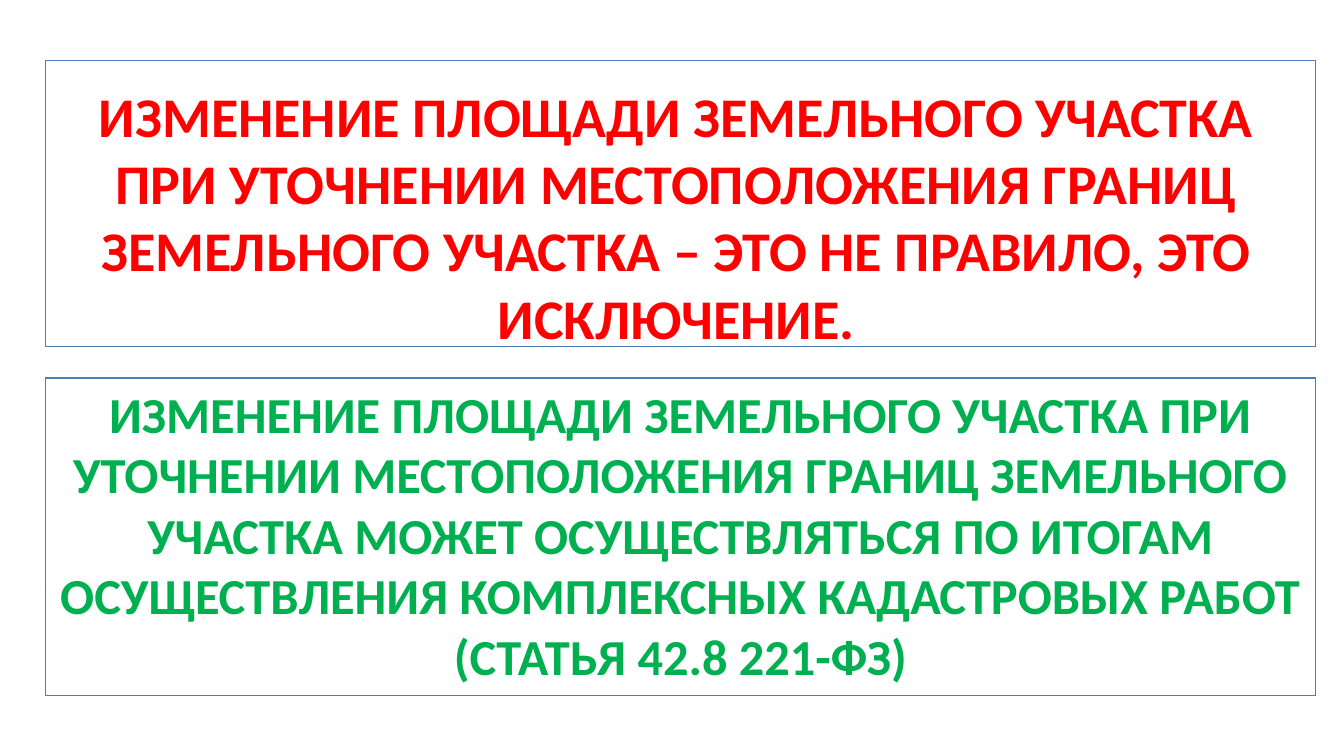
from pptx import Presentation
from pptx.dml.color import RGBColor
from pptx.enum.shapes import MSO_CONNECTOR
from pptx.enum.text import MSO_ANCHOR, PP_ALIGN
from pptx.oxml.ns import qn
from pptx.util import Pt
from lxml.etree import SubElement

PX = 9144  # EMU in one px, 100 px to the inch
COLORS = {"frame": "4B7EBC", "rule": "FF0000", "exception": "00B050"}
RULE = (
    "ИЗМЕНЕНИЕ ПЛОЩАДИ ЗЕМЕЛЬНОГО УЧАСТКА ПРИ УТОЧНЕНИИ МЕСТОПОЛОЖЕНИЯ ГРАНИЦ "
    "ЗЕМЕЛЬНОГО УЧАСТКА – ЭТО НЕ ПРАВИЛО, ЭТО ИСКЛЮЧЕНИЕ."
)
EXCEPTION = (
    "ИЗМЕНЕНИЕ ПЛОЩАДИ ЗЕМЕЛЬНОГО УЧАСТКА ПРИ УТОЧНЕНИИ МЕСТОПОЛОЖЕНИЯ ГРАНИЦ "
    "ЗЕМЕЛЬНОГО УЧАСТКА МОЖЕТ ОСУЩЕСТВЛЯТЬСЯ ПО ИТОГАМ ОСУЩЕСТВЛЕНИЯ "
    "КОМПЛЕКСНЫХ КАДАСТРОВЫХ РАБОТ (СТАТЬЯ 42.8 221-ФЗ)"
)


def add_frame(slide, left, top, width, height):
    """Draw the four separate edges around a statement."""
    right, bottom = left + width, top + height
    corners = [(left, top), (right, top), (right, bottom), (left, bottom)]
    for start, end in zip(corners, corners[1:] + corners[:1]):
        edge = slide.shapes.add_connector(
            MSO_CONNECTOR.STRAIGHT, *(value * PX for value in start + end)
        )
        edge.line.color.rgb = RGBColor.from_string(COLORS["frame"])
        edge.line.width = Pt(0.75)
        SubElement(edge._element.spPr, qn("a:effectLst"))


def add_statement(slide, box, wording, size, color, inset=(0, 0, 0, 0)):
    """Place centred text in a framed box; inset is left, top, right, bottom."""
    left, top, width, height = box
    inset_left, inset_top, inset_right, inset_bottom = inset
    statement = slide.shapes.add_textbox(
        (left + inset_left) * PX,
        (top + inset_top) * PX,
        (width - inset_left - inset_right) * PX,
        (height - inset_top - inset_bottom) * PX,
    )
    frame = statement.text_frame
    frame.word_wrap = True
    frame.vertical_anchor = MSO_ANCHOR.TOP
    frame.text = wording
    paragraph = frame.paragraphs[0]
    paragraph.alignment = PP_ALIGN.CENTER
    font = paragraph.runs[0].font
    font.name, font.size, font.bold = "Calibri", Pt(size), True
    font.color.rgb = RGBColor.from_string(COLORS[color])
    add_frame(slide, *box)


def main():
    deck = Presentation()
    deck.slide_width, deck.slide_height = 1333 * PX, 750 * PX
    slide = deck.slides.add_slide(deck.slide_layouts[6])
    add_statement(
        slide, (45, 60, 1260, 284), RULE, 40, "rule", inset=(23, 16, 32, -11)
    )
    add_statement(slide, (45, 375, 1260, 315), EXCEPTION, 36, "exception")
    deck.save("out.pptx")


if __name__ == "__main__":
    main()
